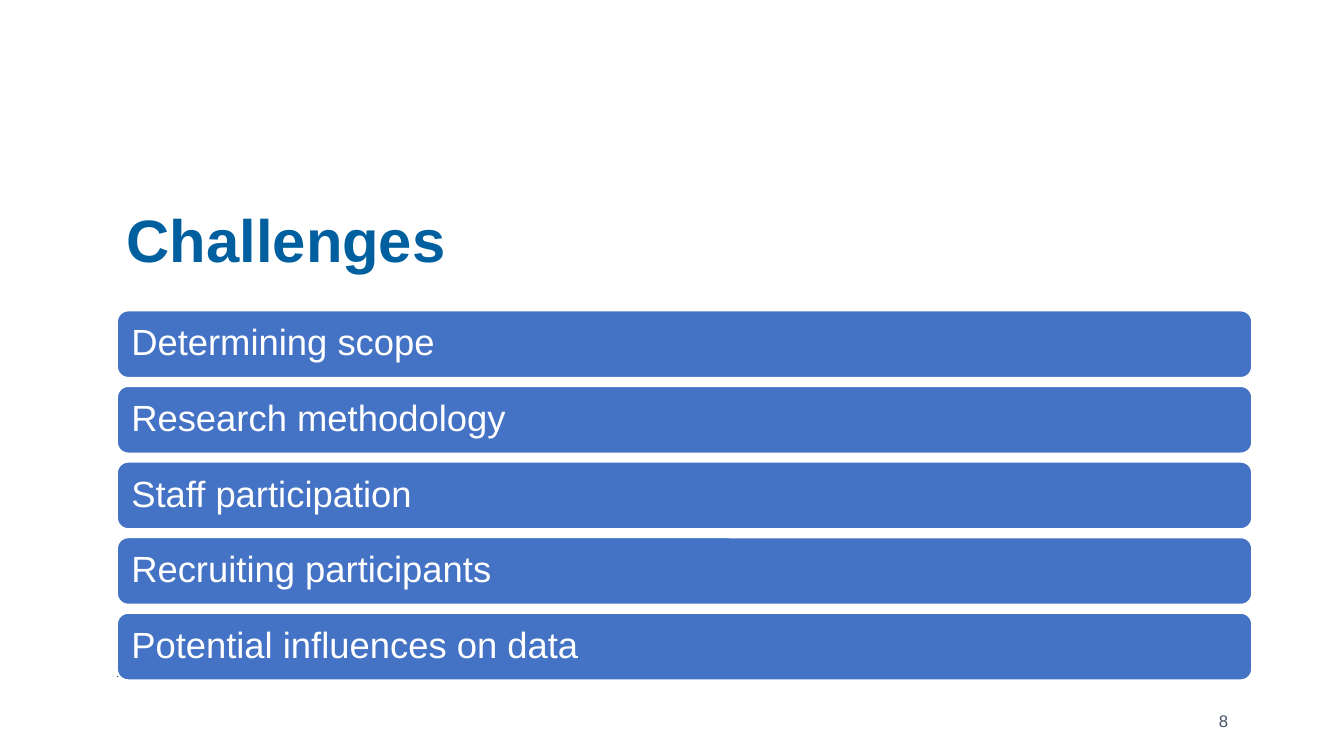
from lxml import etree
from pptx import Presentation
from pptx import util as u
from pptx.dml.color import RGBColor
from pptx.enum import shapes, text
from pptx.oxml.ns import qn

PX = 9144
TITLE_BLUE = RGBColor(0x00, 0x5F, 0x9F)
BAR_BLUE = RGBColor(0x44, 0x72, 0xC4)
SLATE = RGBColor(0x44, 0x54, 0x6A)
WHITE = RGBColor(0xFF, 0xFF, 0xFF)

CHALLENGES = [
    "Determining scope",
    "Research methodology",
    "Staff participation",
    "Recruiting participants",
    "Potential influences on data",
]


def px(*lengths):
    """Turn px lengths into EMU."""
    return [u.Emu(length * PX) for length in lengths]


def write(frame, words, size, color, margins, bold=False, align=text.PP_ALIGN.LEFT,
          anchor=text.MSO_ANCHOR.MIDDLE):
    """Fill a text frame with one formatted paragraph and return it."""
    frame.word_wrap = True
    frame.vertical_anchor = anchor
    across, down = px(*margins)
    frame.margin_left = frame.margin_right = across
    frame.margin_top = frame.margin_bottom = down
    frame.text = words
    paragraph = frame.paragraphs[0]
    paragraph.alignment = align
    font = paragraph.runs[0].font
    font.name, font.size, font.bold = "Arial", u.Pt(size), bold
    font.color.rgb = color
    return paragraph


def add_title(slide, words, left, top, width, height):
    """Place the slide title in its box."""
    title = slide.shapes.add_textbox(*px(left, top, width, height))
    write(title.text_frame, words, 42.7, TITLE_BLUE, (10, 5), bold=True,
          anchor=text.MSO_ANCHOR.TOP).line_spacing = 0.9


def add_challenges(slide, challenges, left, top, width, height, gap=8):
    """Stack equal rounded bars, one per challenge, to fill the box."""
    pitch = (height + gap) // len(challenges)
    for row, challenge in enumerate(challenges):
        bar = slide.shapes.add_shape(
            shapes.MSO_SHAPE.ROUNDED_RECTANGLE,
            *px(left, top + row * pitch, width, pitch - gap))
        bar.shadow.inherit = False
        bar.fill.solid()
        bar.fill.fore_color.rgb = BAR_BLUE
        bar.line.color.rgb = WHITE
        bar.line.width = u.Pt(1.5)
        write(bar.text_frame, challenge, 26, WHITE, (11, 11)).line_spacing = 0.9


def add_footer(slide, number, left, top, width, height):
    """Draw the footer rule and the slide number at the right of the box."""
    rule = slide.shapes.add_connector(
        shapes.MSO_CONNECTOR.STRAIGHT, *px(left, top, left + width, top))
    rule.line.color.rgb = SLATE
    rule.line.width = u.Pt(1)
    etree.SubElement(rule.element.spPr, qn("a:effectLst"))
    number_width, number_height = 309, 40
    page = slide.shapes.add_textbox(*px(
        left + width - number_width, top + height - number_height,
        number_width, number_height))
    write(page.text_frame, number, 12, SLATE, (0, 5),
          align=text.PP_ALIGN.RIGHT).space_after = u.Pt(6)


def main():
    """Build the challenges slide."""
    deck = Presentation()
    deck.slide_width, deck.slide_height = px(1333, 750)
    slide = deck.slides.add_slide(deck.slide_layouts[6])
    add_footer(slide, "8", 116, 671, 1102, 64)
    add_title(slide, "Challenges", 116, 204, 1126, 85)
    add_challenges(slide, CHALLENGES, 116, 308, 1126, 367)
    deck.save("out.pptx")


if __name__ == "__main__":
    main()
